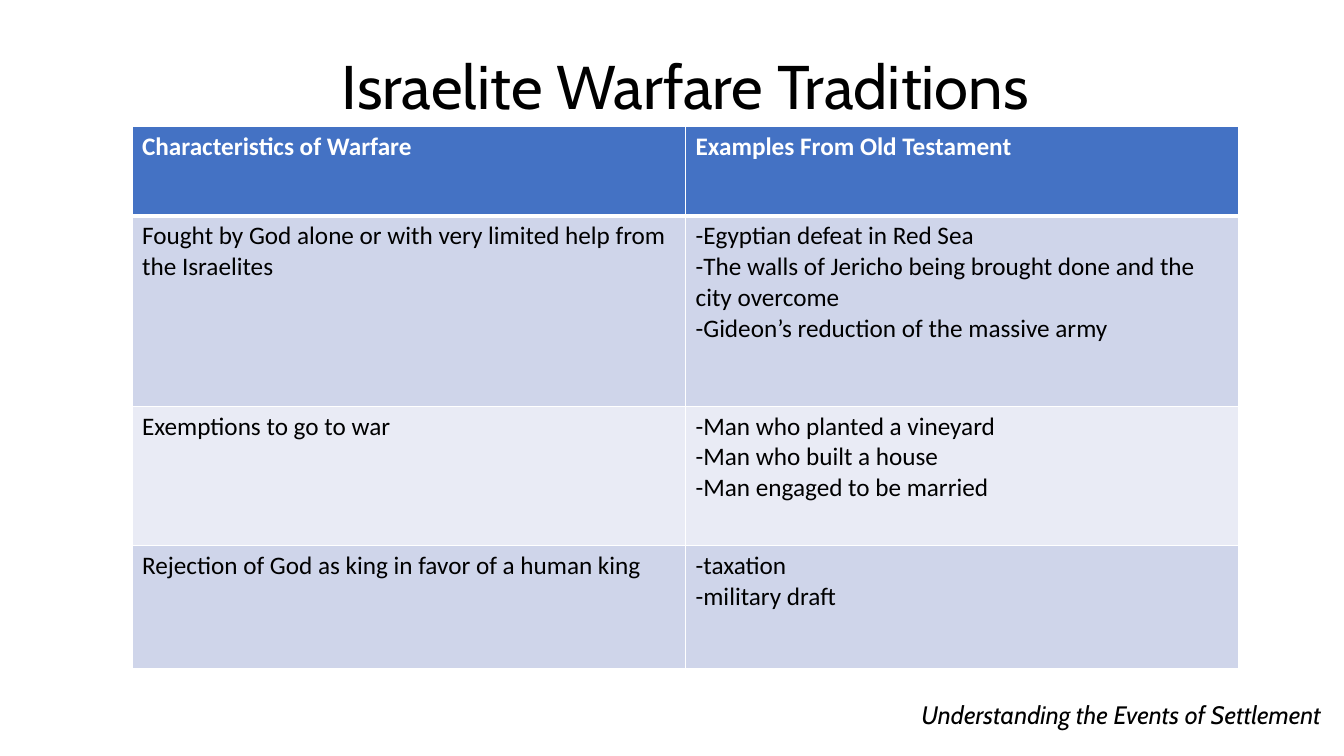
from dataclasses import dataclass

from lxml import etree
from pptx import Presentation
from pptx import util as u
from pptx.dml.color import RGBColor
from pptx.enum import text
from pptx.oxml.ns import qn

PX = 9144  # EMU per px, 100 px to the inch


@dataclass(frozen=True)
class Theme:
    ink: str = "000000"
    white: str = "FFFFFF"
    header: str = "4472C4"
    bands: tuple = ("CFD5EA", "E9EBF5")
    display: str = "Cabin"
    body: str = "Calibri"
    title_size: int = 44
    text_size: int = 18
    rule: int = 1
    header_rule: int = 3


@dataclass(frozen=True)
class Box:
    left: int
    top: int
    width: int
    height: int

    def emu(self) -> list:
        return [u.Emu(n * PX) for n in (self.left, self.top, self.width, self.height)]


@dataclass(frozen=True)
class Caption:
    words: str
    box: Box
    frame: dict
    paragraph: dict
    font: dict


@dataclass(frozen=True)
class Tradition:
    height: int
    characteristic: str
    examples: tuple


THEME = Theme()

# Content
CAPTIONS = (
    Caption("Israelite Warfare Traditions", Box(105, 16, 1150, 145),
            {"vertical_anchor": text.MSO_ANCHOR.MIDDLE},
            {"alignment": text.PP_ALIGN.CENTER, "line_spacing": 0.9},
            {"size": u.Pt(THEME.title_size)}),
    Caption("Understanding the Events of Settlement", Box(644, 689, 676, 40),
            {"auto_size": text.MSO_AUTO_SIZE.SHAPE_TO_FIT_TEXT},
            {"alignment": text.PP_ALIGN.RIGHT},
            {"size": u.Pt(THEME.text_size), "italic": True}),
)
TABLE_BOX = Box(131, 125, 1098, 538)
TRADITIONS = (
    Tradition(89, "Characteristics of Warfare", ("Examples From Old Testament",)),
    Tradition(189, "Fought by God alone or with very limited help from the Israelites",
              ("-Egyptian defeat in Red Sea",
               "-The walls of Jericho being brought done and the city overcome",
               "-Gideon’s reduction of the massive army")),
    Tradition(138, "Exemptions to go to war",
              ("-Man who planted a vineyard",
               "-Man who built a house",
               "-Man engaged to be married")),
    Tradition(122, "Rejection of God as king in favor of a human king",
              ("-taxation", "-military draft")),
)


def apply(target, values: dict) -> None:
    for key, value in values.items():
        setattr(target, key, value)


def style_font(font, color: str, values: dict) -> None:
    apply(font, values)
    font.color.rgb = RGBColor.from_string(color)


def add_caption(slide, caption: Caption) -> None:
    frame = slide.shapes.add_textbox(*caption.box.emu()).text_frame
    apply(frame, {"word_wrap": True, **caption.frame})
    paragraph = frame.paragraphs[0]
    apply(paragraph, caption.paragraph)
    run = paragraph.add_run()
    run.text = caption.words
    style_font(run.font, THEME.ink, {"name": THEME.display, **caption.font})


def add_borders(cell, row: int) -> None:
    widths = {"lnL": THEME.rule, "lnR": THEME.rule,
              "lnT": THEME.header_rule if row == 1 else THEME.rule,
              "lnB": THEME.header_rule if row == 0 else THEME.rule}
    properties = cell._tc.get_or_add_tcPr()
    for side, width in widths.items():
        line = etree.SubElement(properties, qn(f"a:{side}"), w=str(u.Pt(width)))
        fill = etree.SubElement(line, qn("a:solidFill"))
        etree.SubElement(fill, qn("a:srgbClr"), val=THEME.white)


def fill_cell(cell, row: int, lines: tuple) -> None:
    is_header = row == 0
    add_borders(cell, row)
    cell.fill.solid()
    cell.fill.fore_color.rgb = RGBColor.from_string(
        THEME.header if is_header else THEME.bands[(row - 1) % 2])
    cell.text = "\n".join(lines)
    for paragraph in cell.text_frame.paragraphs:
        for run in paragraph.runs:
            style_font(run.font, THEME.white if is_header else THEME.ink,
                       {"name": THEME.body, "size": u.Pt(THEME.text_size), "bold": is_header})


def add_traditions(slide) -> None:
    table = slide.shapes.add_table(len(TRADITIONS), 2, *TABLE_BOX.emu()).table
    for row, tradition in enumerate(TRADITIONS):
        table.rows[row].height = u.Emu(tradition.height * PX)
        for column, lines in enumerate(((tradition.characteristic,), tradition.examples)):
            fill_cell(table.cell(row, column), row, lines)


def main() -> None:
    deck = Presentation()
    deck.slide_width, deck.slide_height = u.Emu(1333 * PX), u.Emu(750 * PX)
    slide = deck.slides.add_slide(deck.slide_layouts[6])

    # Title and section footer
    for caption in CAPTIONS:
        add_caption(slide, caption)

    # Characteristics and their examples
    add_traditions(slide)
    deck.save("out.pptx")


if __name__ == "__main__":
    main()
